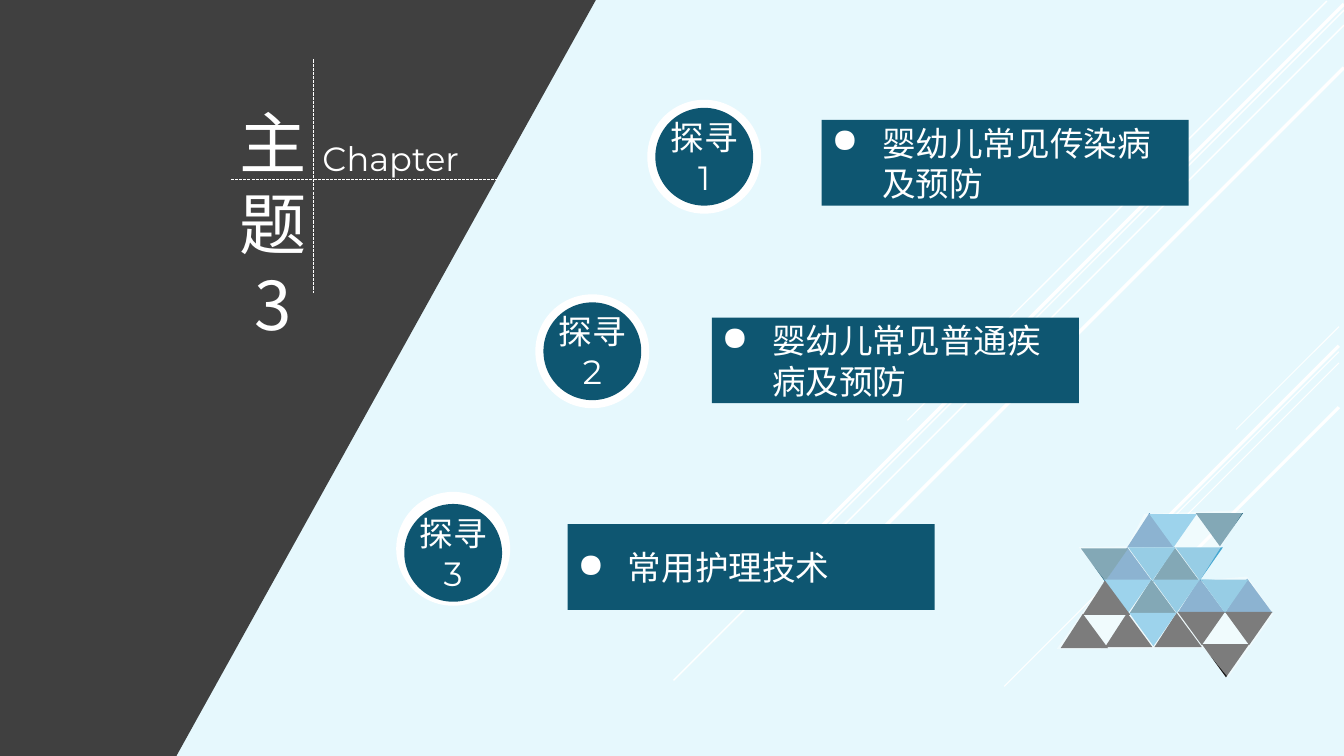
import pptx
import pptx.util
import lxml.etree
from dataclasses import dataclass
from pptx.dml.color import RGBColor
from pptx.enum.dml import MSO_LINE
from pptx.enum.shapes import MSO_CONNECTOR, MSO_SHAPE
from pptx.enum.text import MSO_ANCHOR, MSO_AUTO_SIZE, PP_ALIGN
from pptx.oxml.ns import qn

PX = 9144


@dataclass(frozen=True)
class Theme:
    ground: str = "E4F8FD"
    white: str = "FFFFFF"
    panel: str = "404040"
    teal: str = "0E5671"
    blue: str = "1F6BA5"
    sky: str = "40ABDB"
    aqua: str = "349FCD"
    black: str = "000000"
    latin: str = "Montserrat"
    title_font: str = "Noto Sans CJK SC"
    list_font: str = "Noto Sans CJK JP"
    title_size: int = 48
    text_size: int = 24
    title_pitch: int = 58
    list_pitch: int = 29


@dataclass(frozen=True)
class Streak:
    x: int
    y: int
    run: int
    weight: float


@dataclass(frozen=True)
class Facet:
    x: int
    y: int
    up: bool
    color: str


@dataclass(frozen=True)
class Topic:
    ring: tuple[int, int]
    disc: tuple[int, int]
    box: tuple[int, int]
    label: str
    text: str


T = Theme()

LOWER_STREAKS = [
    Streak(1328, 324, 102, 0.75),
    Streak(1328, 349, 332, 0.75),
    Streak(1328, 360, 211, 0.75),
    Streak(1328, 343, 194, 2.25),
    Streak(1328, 404, 142, 2.25),
]
UPPER_STREAKS = [
    Streak(1316, 1, 416, 1),
    Streak(1333, 10, 665, 1),
    Streak(1333, 25, 542, 1),
    Streak(1333, 4, 530, 2.5),
    Streak(1333, 67, 475, 2.5),
]
FACETS = [
    Facet(1118, 509, True, T.blue),
    Facet(1143, 543, True, T.teal),
    Facet(1096, 543, True, T.blue),
    Facet(1215, 574, True, T.blue),
    Facet(1168, 574, True, T.blue),
    Facet(1120, 575, True, T.teal),
    Facet(1186, 509, False, T.teal),
    Facet(1140, 510, False, T.sky),
    Facet(1166, 543, False, T.aqua),
    Facet(1119, 543, False, T.aqua),
    Facet(1072, 544, False, T.teal),
    Facet(1191, 575, False, T.aqua),
    Facet(1143, 575, False, T.aqua),
    Facet(1095, 575, False, T.sky),
    Facet(1215, 607, False, T.black),
    Facet(1168, 607, False, T.black),
    Facet(1145, 608, True, T.black),
    Facet(1192, 639, False, T.black),
    Facet(1120, 608, False, T.sky),
    Facet(1074, 576, True, T.black),
    Facet(1052, 609, True, T.black),
    Facet(1096, 608, True, T.black),
]
VEIL = [(1118, 542), (1135, 510), (1234, 506), (1190, 576), (1237, 572), (1263, 609),
        (1218, 672), (1194, 643), (1048, 644), (1096, 576), (1070, 543)]
PANEL = [(-4, 0), (591, 0), (175, 750), (-4, 750)]
TOPICS = [
    Topic((642, 99), (650, 107), (815, 119), "探寻1", "婴幼儿常见传染病及预防"),
    Topic((531, 292), (539, 300), (706, 315), "探寻2", "婴幼儿常见普通疾病及预防"),
    Topic((393, 488), (401, 500), (563, 520), "探寻\n3", "常用护理技术"),
]


def px(*values: int) -> list[int]:
    return [v * PX for v in values]


def paint(sp, color: str, opacity: int = 100) -> None:
    sp.shadow.inherit = False
    sp.fill.solid()
    sp.fill.fore_color.rgb = RGBColor.from_string(color)
    sp.line.fill.background()
    if opacity < 100:
        clr = sp._element.spPr.find(qn("a:solidFill"))[0]
        lxml.etree.SubElement(clr, qn("a:alpha")).set("val", str(opacity * 1000))


def add_preset(s, kind, box: tuple, color: str, opacity: int = 100):
    sp = s.shapes.add_shape(kind, *px(*box))
    paint(sp, color, opacity)
    return sp


def add_outline(s, points: list, color: str, opacity: int = 100) -> None:
    fb = s.shapes.build_freeform(*points[0], scale=PX)
    fb.add_line_segments(points[1:], close=True)
    paint(fb.convert_to_shape(), color, opacity)


def add_line(s, x1: int, y1: int, x2: int, y2: int, weight: float):
    ln = s.shapes.add_connector(MSO_CONNECTOR.STRAIGHT, *px(x1, y1, x2, y2))
    ln.line.color.rgb = RGBColor.from_string(T.white)
    ln.line.width = pptx.util.Pt(weight)
    lxml.etree.SubElement(ln._element.spPr, qn("a:effectLst"))
    return ln


def add_streaks(s, streaks: list[Streak]) -> None:
    for k in streaks:
        add_line(s, k.x, k.y, k.x - k.run, k.y + k.run, k.weight)


def add_facet(s, f: Facet) -> None:
    if f.up:
        points = [(f.x + 22, f.y), (f.x + 47, f.y + 34), (f.x, f.y + 34)]
    else:
        points = [(f.x + 24, f.y + 33), (f.x, f.y), (f.x + 47, f.y)]
    add_outline(s, points, f.color)


def write(sp, text: str, font: str, size: int, align, anchor, pitch: int = 0) -> None:
    tf = sp.text_frame
    tf.text = text
    tf.word_wrap = True
    tf.auto_size = MSO_AUTO_SIZE.NONE
    tf.vertical_anchor = anchor
    for p in tf.paragraphs:
        p.alignment = align
        if pitch:
            p.line_spacing = pptx.util.Pt(pitch)
        for r in p.runs:
            r.font.name = font
            r.font.size = pptx.util.Pt(size)
            r.font.color.rgb = RGBColor.from_string(T.white)
            lxml.etree.SubElement(r._r.get_or_add_rPr(), qn("a:ea")).set("typeface", font)


def add_bullet(p) -> None:
    pPr = p._p.get_or_add_pPr()
    pPr.set("marL", str(50 * PX))
    pPr.set("indent", str(-50 * PX))
    lxml.etree.SubElement(pPr, qn("a:buChar")).set("char", "●")


def add_topic(s, t: Topic) -> None:
    disc = add_preset(s, MSO_SHAPE.OVAL, (*t.disc, 97, 97), T.teal)
    tf = disc.text_frame
    tf.margin_left = tf.margin_right = tf.margin_top = tf.margin_bottom = 0
    write(disc, t.label, T.latin, T.text_size, PP_ALIGN.CENTER, MSO_ANCHOR.MIDDLE)
    box = add_preset(s, MSO_SHAPE.RECTANGLE, (*t.box, 364, 85), T.teal)
    write(box, t.text, T.list_font, T.text_size, PP_ALIGN.LEFT, MSO_ANCHOR.MIDDLE, T.list_pitch)
    add_bullet(box.text_frame.paragraphs[0])


def add_heading(s) -> None:
    chapter = s.shapes.add_textbox(*px(310, 132, 198, 50))
    write(chapter, "Chapter", T.latin, T.text_size, PP_ALIGN.JUSTIFY, MSO_ANCHOR.TOP)
    title = s.shapes.title
    s.shapes._spTree.append(title._element)
    title.left, title.top, title.width, title.height = px(197, 95, 147, 252)
    write(title, "主题\n3", T.title_font, T.title_size, PP_ALIGN.CENTER, MSO_ANCHOR.TOP, T.title_pitch)
    for ends in [(229, 178, 495, 178), (311, 59, 311, 291)]:
        add_line(s, *ends, 0.75).line.dash_style = MSO_LINE.SQUARE_DOT


def main() -> None:
    prs = pptx.Presentation()
    prs.slide_width, prs.slide_height = px(1333, 750)
    s = prs.slides.add_slide(prs.slide_layouts[5])
    s.background.fill.solid()
    s.background.fill.fore_color.rgb = RGBColor.from_string(T.ground)
    add_streaks(s, LOWER_STREAKS)
    for f in FACETS:
        add_facet(s, f)
    add_streaks(s, UPPER_STREAKS)
    add_preset(s, MSO_SHAPE.RECTANGLE, (3, 0, 1331, 750), T.white, 9)
    add_outline(s, VEIL, T.white, 44)
    add_outline(s, PANEL, T.panel)
    add_heading(s)
    for t in TOPICS:
        add_preset(s, MSO_SHAPE.OVAL, (*t.ring, 113, 113), T.white)
    for t in TOPICS:
        add_topic(s, t)
    prs.save("out.pptx")


if __name__ == "__main__":
    main()
